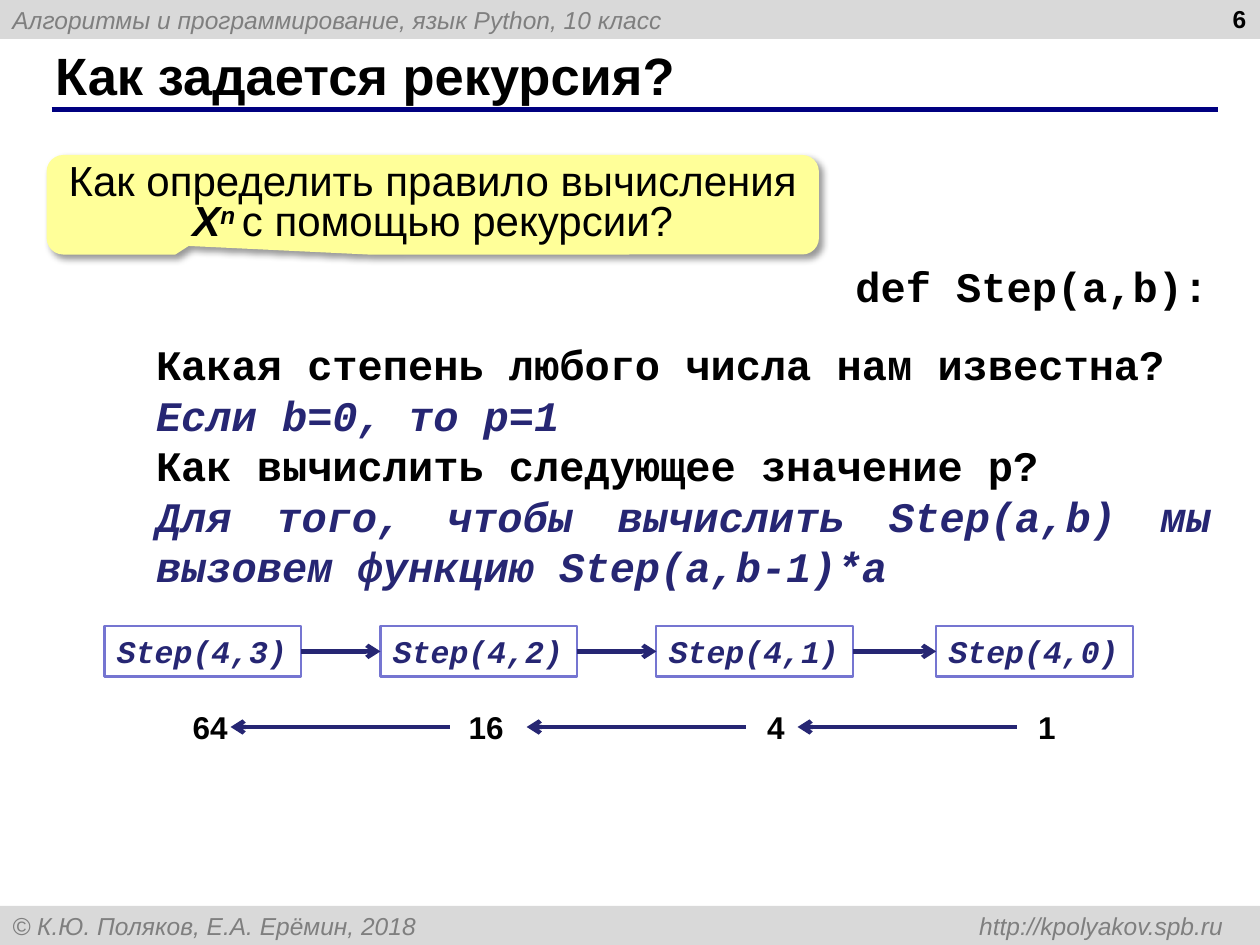
"""Build the slide on how a recursive power function is defined."""
import lxml.etree
import pptx
import pptx.dml.color
import pptx.enum.shapes
import pptx.enum.text
import pptx.oxml
import pptx.oxml.ns
import pptx.util

Inches = pptx.util.Inches
Pt = pptx.util.Pt
RGBColor = pptx.dml.color.RGBColor
Shape = pptx.enum.shapes.MSO_SHAPE
Align = pptx.enum.text.PP_ALIGN
Anchor = pptx.enum.text.MSO_ANCHOR
qn = pptx.oxml.ns.qn

COLORS = {
    "band": "D9D9D9",
    "band_text": "7F7F7F",
    "rule": "000080",
    "callout": "FFFF99",
    "text": "000000",
    "answer": "262673",
    "box": "7575D1",
}


def write(shape, lines, size, font="Arial", color="text", bold=True, italic=False,
          align=Align.LEFT, anchor=Anchor.TOP, wrap=True):
    frame = shape.text_frame
    frame.text = "\n".join(lines)
    frame.word_wrap = wrap
    frame.vertical_anchor = anchor
    for paragraph in frame.paragraphs:
        paragraph.alignment = align
        for run in paragraph.runs:
            run.font.name = font
            run.font.size = Pt(size)
            run.font.bold = bold
            run.font.italic = italic
            run.font.color.rgb = RGBColor.from_string(COLORS[color])
    return frame


def draw_line(start, end, color, width, arrow=True):
    line = slide.shapes.add_connector(
        pptx.enum.shapes.MSO_CONNECTOR.STRAIGHT,
        Inches(start[0]), Inches(start[1]), Inches(end[0]), Inches(end[1]))
    line.line.color.rgb = RGBColor.from_string(COLORS[color])
    line.line.width = Pt(width)
    properties = line._element.spPr
    if arrow:
        outline = properties.find(qn("a:ln"))
        lxml.etree.SubElement(outline, qn("a:tailEnd"), type="arrow")
    lxml.etree.SubElement(properties, qn("a:effectLst"))
    return line


presentation = pptx.Presentation()
presentation.slide_width = Inches(10)
presentation.slide_height = Inches(7.5)
slide = presentation.slides.add_slide(presentation.slide_layouts[6])

bands = [
    (0, "Алгоритмы и программирование, язык Python, 10 класс"),
    (7.19, "© К.Ю. Поляков, Е.А. Ерёмин, 2018\thttp://kpolyakov.spb.ru"),
]
for top, text in bands:
    band = slide.shapes.add_shape(Shape.RECTANGLE, 0, Inches(top), Inches(10), Inches(0.31))
    band.shadow.inherit = False
    band.fill.solid()
    band.fill.fore_color.rgb = RGBColor.from_string(COLORS["band"])
    band.line.fill.background()
    frame = write(band, [text], 14, color="band_text", bold=False, italic=True,
                  anchor=Anchor.MIDDLE)
    if "\t" in text:
        paragraph_properties = frame.paragraphs[0]._p.get_or_add_pPr()
        tabs = lxml.etree.SubElement(paragraph_properties, qn("a:tabLst"))
        lxml.etree.SubElement(tabs, qn("a:tab"), pos=str(Inches(9.61)), algn="r")

draw_line((0.41, 0.87), (9.67, 0.87), "rule", 3, arrow=False)
title = slide.shapes.add_textbox(Inches(0.34), Inches(0.33), Inches(9.16), Inches(0.52))
write(title, ["Как задается рекурсия?"], 30, anchor=Anchor.MIDDLE)
page_number = slide.shapes.add_textbox(Inches(7.66), Inches(-0.02), Inches(2.33), Inches(0.52))
write(page_number, ["6"], 14, align=Align.RIGHT)

callout = slide.shapes.add_shape(Shape.ROUNDED_RECTANGULAR_CALLOUT,
                                 Inches(0.37), Inches(1.23), Inches(6.13), Inches(0.79))
for index, value in enumerate((-0.316, 0.414, 0.167)):
    callout.adjustments[index] = value
callout.fill.solid()
callout.fill.fore_color.rgb = RGBColor.from_string(COLORS["callout"])
callout.line.fill.background()
callout.shadow.inherit = False
effects = callout._element.spPr.find(qn("a:effectLst"))
shadow = lxml.etree.SubElement(effects, qn("a:outerShdw"), blurRad=str(Pt(4)),
                               dist=str(Pt(3)), dir="2700000", algn="tl", rotWithShape="0")
shadow_color = lxml.etree.SubElement(shadow, qn("a:srgbClr"), val=COLORS["text"])
lxml.etree.SubElement(shadow_color, qn("a:alpha"), val="40000")
frame = callout.text_frame
frame.margin_left = frame.margin_right = frame.margin_top = frame.margin_bottom = 0
question = frame.paragraphs[0]
for text in ("Как определить правило вычисления ", "Х", "n ", "с помощью рекурсии?"):
    question.add_run().text = text
question.line_spacing = 0.8
question.alignment = Align.CENTER
frame.word_wrap = True
frame.vertical_anchor = Anchor.MIDDLE
for index, run in enumerate(question.runs):
    run.font.name = "Arial"
    run.font.size = Pt(24)
    run.font.color.rgb = RGBColor.from_string(COLORS["text"])
    run.font.bold = run.font.italic = index in (1, 2)
question.runs[2]._r.get_or_add_rPr().set("baseline", "30000")

explanation = slide.shapes.add_textbox(Inches(1.14), Inches(2.63), Inches(8.57), Inches(2.12))
frame = write(explanation, [
    "Какая степень любого числа нам известна?",
    "Если b=0, то p=1",
    "Как вычислить следующее значение р?",
    "Для того, чтобы вычислить Step(a,b) мы вызовем функцию Step(a,b-1)*а",
], 24, "Courier New", align=Align.JUSTIFY, anchor=Anchor.MIDDLE)
for answer in frame.paragraphs[1::2]:
    answer.runs[0].font.italic = True
    answer.runs[0].font.color.rgb = RGBColor.from_string(COLORS["answer"])

definition = slide.shapes.add_textbox(Inches(6.69), Inches(2.02), Inches(3.02), Inches(0.5))
write(definition, ["def Step(a,b):"], 24, "Courier New", align=Align.JUSTIFY, wrap=False)

calls = []
for exponent, left in zip((3, 2, 1, 0), (0.83, 3.02, 5.21, 7.43)):
    call = slide.shapes.add_shape(Shape.RECTANGLE, Inches(left), Inches(4.97),
                                  Inches(1.56), Inches(0.4))
    call.shadow.inherit = False
    call.fill.background()
    call.line.color.rgb = RGBColor.from_string(COLORS["box"])
    call.line.width = Pt(1.25)
    write(call, [f"Step(4,{exponent})"], 18, "Courier New", "answer", italic=True, wrap=False)
    calls.append(call)

for caller, called in zip(calls, calls[1:]):
    arrow = draw_line((0, 0), (1, 0), "answer", 2.5)
    arrow.begin_connect(caller, 3)
    arrow.end_connect(called, 1)

results = [("64", 1.43, 0.48), ("16", 3.62, 0.48), ("4", 5.99, 0.34), ("1", 8.14, 0.34)]
for text, left, width in results:
    result = slide.shapes.add_textbox(Inches(left), Inches(5.57), Inches(width), Inches(0.4))
    write(result, [text], 18, wrap=False)
for start in (3.57, 5.92, 8.07):
    draw_line((start, 5.77), (start - 1.74, 5.77), "answer", 2.5)

presentation.save("out.pptx")
